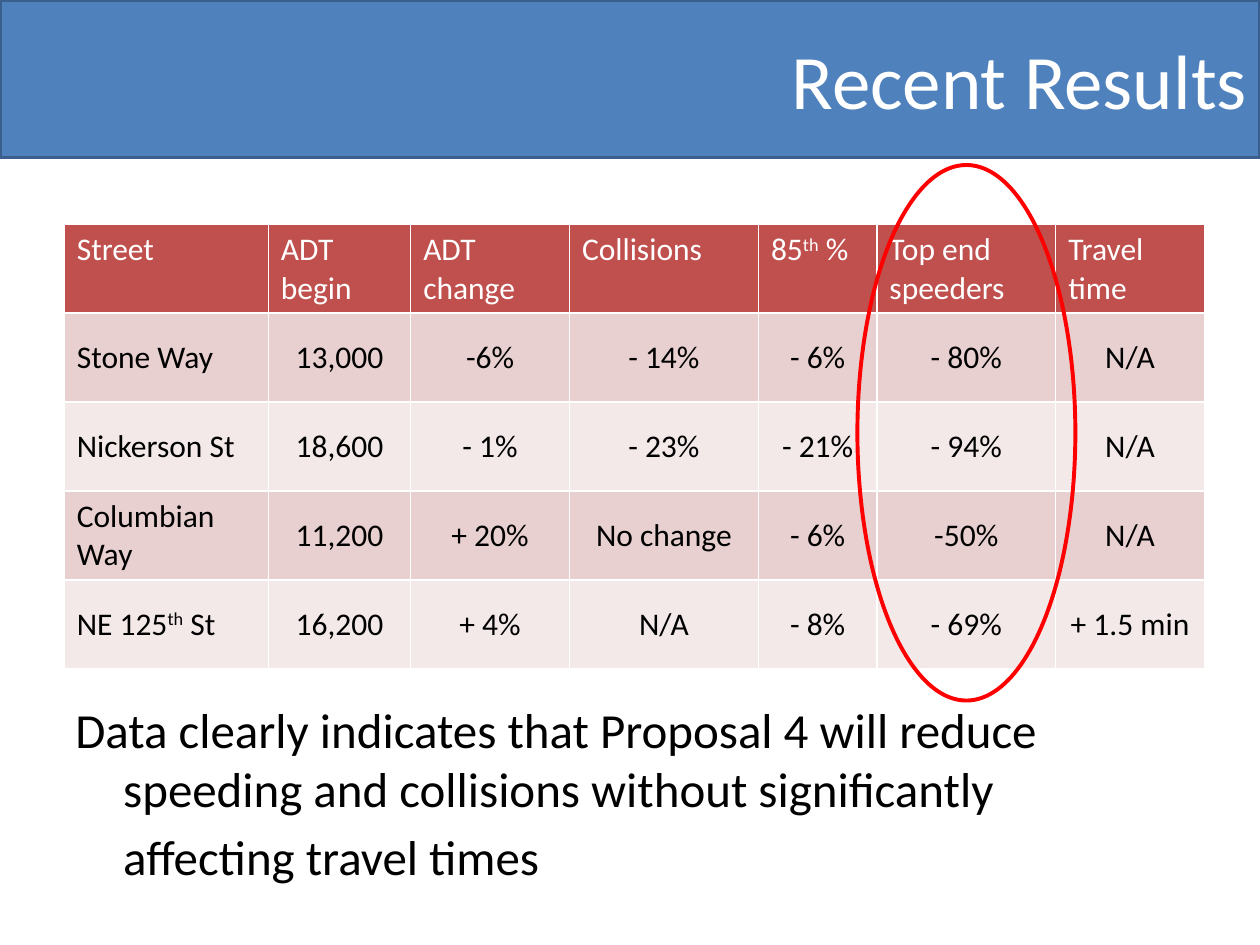
from lxml.etree import SubElement
from pptx import Presentation
from pptx.dml.color import RGBColor as RGB
from pptx.enum.shapes import MSO_SHAPE as SHAPE
from pptx.enum.text import MSO_ANCHOR as ANCHOR, PP_ALIGN as ALIGN
from pptx.oxml.ns import qn
from pptx.util import Inches, Pt

TITLE = "Recent Results"
HEADER = ["Street", "ADT begin", "ADT\nchange", "Collisions", "85^th^ %",
          "Top end speeders", "Travel time"]
STREETS = [
    ["Stone Way", "13,000", "-6%", "- 14%", "- 6%", "- 80%", "N/A"],
    ["Nickerson St", "18,600", "- 1%", "- 23%", "- 21%", "- 94%", "N/A"],
    ["Columbian Way", "11,200", "+ 20%", "No change", "- 6%", "-50%", "N/A"],
    ["NE 125^th^ St", "16,200", "+ 4%", "N/A", "- 8%", "- 69%", "+ 1.5 min"],
]
CONCLUSION = [
    ("Data clearly indicates that Proposal 4 will reduce speeding and "
     "collisions without significantly", -0.38, 0),
    ("affecting travel times", 0, 5.6),
]
COL_WIDTHS = [1.62, 1.13, 1.26, 1.5, 0.94, 1.42, 1.18]
TABLE_LEFT, TABLE_TOP, TABLE_HEIGHT = 0.51, 1.78, 3.53
HIGHLIGHT_COL = 5
HIGHLIGHT_SIZE = 1.73, 4.25

THEME = {
    "font": "Calibri",
    "title": 44, "cell": 18, "body": 28,
    "white": "FFFFFF", "black": "000000",
    "banner": "4F81BD", "banner_line": "3A5F8C",
    "header": "C0504D", "bands": ("E8D0D0", "F4E9E9"),
    "highlight": "FF0000",
}


def color(name):
    return RGB.from_string(THEME[name])


def write(p, text, size, ink, **para_format):
    for key, value in para_format.items():
        setattr(p, key, value)
    for i, part in enumerate(text.split("^")):
        r = p.add_run()
        r.text = part
        for key, value in {"name": THEME["font"], "size": Pt(THEME[size])}.items():
            setattr(r.font, key, value)
        r.font.color.rgb = color(ink)
        if i % 2:
            r.font._element.set("baseline", "30000")


def add_outline(s, kind, box, line, width, fill=None):
    sp = s.shapes.add_shape(kind, *map(Inches, box))
    sp.shadow.inherit = False
    if fill:
        sp.fill.solid()
        sp.fill.fore_color.rgb = color(fill)
    else:
        sp.fill.background()
    sp.line.color.rgb = color(line)
    sp.line.width = Pt(width)


def add_text_frame(s, box, anchor):
    tf = s.shapes.add_textbox(*map(Inches, box)).text_frame
    for key, value in {"word_wrap": True, "vertical_anchor": anchor}.items():
        setattr(tf, key, value)
    return tf


def add_borders(cell):
    tc_pr = cell._tc.get_or_add_tcPr()
    for side in ("lnL", "lnR", "lnT", "lnB"):
        ln = SubElement(tc_pr, qn(f"a:{side}"), w=str(Pt(1)))
        fill = SubElement(ln, qn("a:solidFill"))
        SubElement(fill, qn("a:srgbClr"), val=THEME["white"])


def add_results_table(s):
    rows = [HEADER] + STREETS
    table = s.shapes.add_table(
        len(rows), len(HEADER), Inches(TABLE_LEFT), Inches(TABLE_TOP),
        Inches(sum(COL_WIDTHS)), Inches(TABLE_HEIGHT)).table
    for col, width in zip(table.columns, COL_WIDTHS):
        col.width = Inches(width)
    for i, values in enumerate(rows):
        table.rows[i].height = Inches(TABLE_HEIGHT / len(rows))
        fill = THEME["bands"][(i - 1) % 2] if i else THEME["header"]
        for j, value in enumerate(values):
            cell = table.cell(i, j)
            add_borders(cell)
            cell.fill.solid()
            cell.fill.fore_color.rgb = RGB.from_string(fill)
            cell.vertical_anchor = ANCHOR.MIDDLE if i else ANCHOR.TOP
            align = ALIGN.CENTER if i and j else ALIGN.LEFT
            tf = cell.text_frame
            for k, line in enumerate(value.split("\n")):
                p = tf.add_paragraph() if k else tf.paragraphs[0]
                write(p, line, "cell", "black" if i else "white", alignment=align)


def add_highlight(s):
    width, height = HIGHLIGHT_SIZE
    center = TABLE_LEFT + sum(COL_WIDTHS[:HIGHLIGHT_COL]) + COL_WIDTHS[HIGHLIGHT_COL] / 2
    add_outline(s, SHAPE.OVAL, (center - width / 2, 1.31, width, height),
                "highlight", 2.25)


def add_conclusion(s):
    tf = add_text_frame(s, (0.5, 5.5, 9, 1.75), ANCHOR.TOP)
    for i, (text, indent, before) in enumerate(CONCLUSION):
        p = tf.add_paragraph() if i else tf.paragraphs[0]
        write(p, text, "body", "black", space_before=Pt(before))
        p_pr = p._p.get_or_add_pPr()
        for key, value in {"marL": 0.38, "indent": indent}.items():
            p_pr.set(key, str(Inches(value)))


def main():
    prs = Presentation()
    prs.slide_width, prs.slide_height = Inches(10), Inches(7.5)
    s = prs.slides.add_slide(prs.slide_layouts[6])
    add_outline(s, SHAPE.RECTANGLE, (0, 0, 10, 1.25), "banner_line", 2, "banner")
    tf = add_text_frame(s, (1, 0, 9, 1.25), ANCHOR.MIDDLE)
    write(tf.paragraphs[0], TITLE, "title", "white", alignment=ALIGN.RIGHT)
    add_results_table(s)
    add_highlight(s)
    add_conclusion(s)
    prs.save("out.pptx")


if __name__ == "__main__":
    main()
